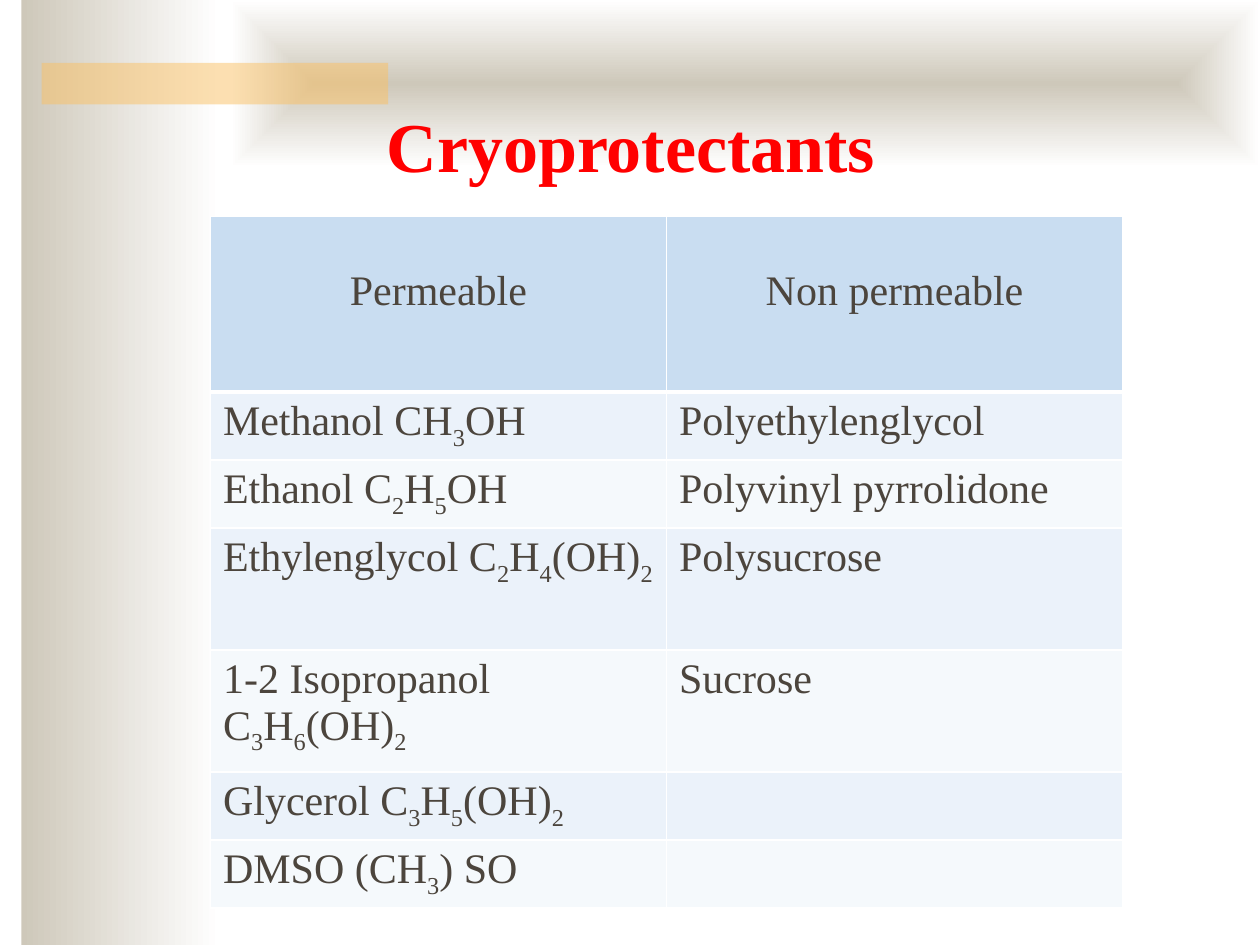
from typing import NamedTuple

from lxml import etree
from pptx import Presentation
from pptx.dml.color import RGBColor
from pptx.enum import shapes, text
from pptx.oxml import ns
from pptx.util import Pt

EMU_PER_PX = 9144
FONT = "Times New Roman"
INK = "4C453D"
WHITE = "FFFFFF"
TAN = "CEC8BA"
HEADER_FILL = "C9DDF1"
BAND_FILLS = ("EBF2FA", "F5F9FC")


class Box(NamedTuple):
    left: int
    top: int
    width: int
    height: int


class Row(NamedTuple):
    height: int
    permeable: str
    non_permeable: str


SIDE_BAND = Box(17, 0, 158, 750)
TOP_BAND = Box(183, 0, 817, 133)
ACCENT = Box(33, 50, 275, 33)
TITLE = Box(297, 86, 430, 67)
TABLE = Box(167, 172, 724, 549)
ROWS = [
    Row(139, "Permeable", "Non permeable"),
    Row(54, "Methanol CH|3|OH", "Polyethylenglycol"),
    Row(54, "Ethanol C|2|H|5|OH", "Polyvinyl pyrrolidone"),
    Row(97, "Ethylenglycol C|2|H|4|(OH)|2", "Polysucrose"),
    Row(97, "1-2 Isopropanol C|3|H|6|(OH)|2", "Sucrose"),
    Row(54, "Glycerol C|3|H|5|(OH)|2", ""),
    Row(54, "DMSO (CH|3|) SO", ""),
]


def px(n: int) -> int:
    return n * EMU_PER_PX


def rgb(value: str) -> RGBColor:
    return RGBColor.from_string(value)


def emu(box: Box) -> list[int]:
    return [px(n) for n in box]


def add_rect(slide, box: Box):
    sp = slide.shapes.add_shape(shapes.MSO_SHAPE.RECTANGLE, *emu(box))
    sp.shadow.inherit = False
    sp.line.fill.background()
    return sp


def add_gradient_rect(slide, box: Box, centred: bool = False) -> None:
    sp = add_rect(slide, box)
    sp.fill.gradient()
    sp.fill.gradient_angle = 0
    for stop, color, position in zip(sp.fill.gradient_stops, (TAN, WHITE), (0, 1)):
        stop.color.rgb = rgb(color)
        stop.position = position
    if centred:
        lin = sp.element.spPr.find(".//" + ns.qn("a:lin"))
        path = etree.Element(ns.qn("a:path"), path="shape")
        etree.SubElement(path, ns.qn("a:fillToRect"), l="50000", t="50000", r="50000", b="50000")
        lin.getparent().replace(lin, path)


def add_accent(slide, box: Box) -> None:
    sp = add_rect(slide, box)
    sp.fill.solid()
    sp.fill.fore_color.rgb = rgb("FAC164")
    color = sp.element.spPr.find(ns.qn("a:solidFill"))[0]
    etree.SubElement(color, ns.qn("a:alpha"), val="50000")


def set_title(slide, box: Box, words: str) -> None:
    sp = slide.shapes.title
    sp.left, sp.top, sp.width, sp.height = emu(box)
    sp.element.getparent().append(sp.element)
    tf = sp.text_frame
    tf.text = words
    tf.vertical_anchor = text.MSO_ANCHOR.BOTTOM
    p = tf.paragraphs[0]
    p.alignment = text.PP_ALIGN.LEFT
    set_font(p, 40, "FF0000", True)


def set_font(p, size: int, color: str, bold: bool = False) -> None:
    p.font.name = FONT
    p.font.size = Pt(size)
    p.font.bold = bold
    p.font.color.rgb = rgb(color)


def set_borders(cell, top: int, bottom: int) -> None:
    tc_pr = cell._tc.get_or_add_tcPr()
    for side, width in (("L", 1), ("R", 1), ("T", top), ("B", bottom)):
        ln = etree.SubElement(tc_pr, ns.qn(f"a:ln{side}"), w=str(Pt(width)))
        fill = etree.SubElement(ln, ns.qn("a:solidFill"))
        etree.SubElement(fill, ns.qn("a:srgbClr"), val=WHITE)


def fill_cell(cell, formula: str, row: int) -> None:
    set_borders(cell, top=3 if row == 1 else 1, bottom=3 if row == 0 else 1)
    cell.fill.solid()
    cell.fill.fore_color.rgb = rgb(BAND_FILLS[(row - 1) % 2] if row else HEADER_FILL)
    p = cell.text_frame.paragraphs[0]
    if row == 0:
        cell.margin_top = px(41)
        p.alignment = text.PP_ALIGN.CENTER
    set_font(p, 24, INK)
    for i, part in enumerate(formula.split("|") if formula else []):
        r = p.add_run()
        r.text = part
        if i % 2:
            r._r.get_or_add_rPr().set("baseline", "-25000")


def add_table(slide, box: Box, rows: list[Row]) -> None:
    table = slide.shapes.add_table(len(rows), 2, *emu(box)).table
    table.first_row = table.horz_banding = False
    for column in table.columns:
        column.width = px(box.width // 2)
    for i, row in enumerate(rows):
        table.rows[i].height = px(row.height)
        for j, formula in enumerate((row.permeable, row.non_permeable)):
            fill_cell(table.cell(i, j), formula, i)


def main() -> None:
    prs = Presentation()
    prs.slide_width, prs.slide_height = px(1000), px(750)
    slide = prs.slides.add_slide(prs.slide_layouts[5])
    add_gradient_rect(slide, SIDE_BAND)
    add_gradient_rect(slide, TOP_BAND, centred=True)
    add_accent(slide, ACCENT)
    set_title(slide, TITLE, "Cryoprotectants")
    add_table(slide, TABLE, ROWS)
    prs.save("out.pptx")


if __name__ == "__main__":
    main()
